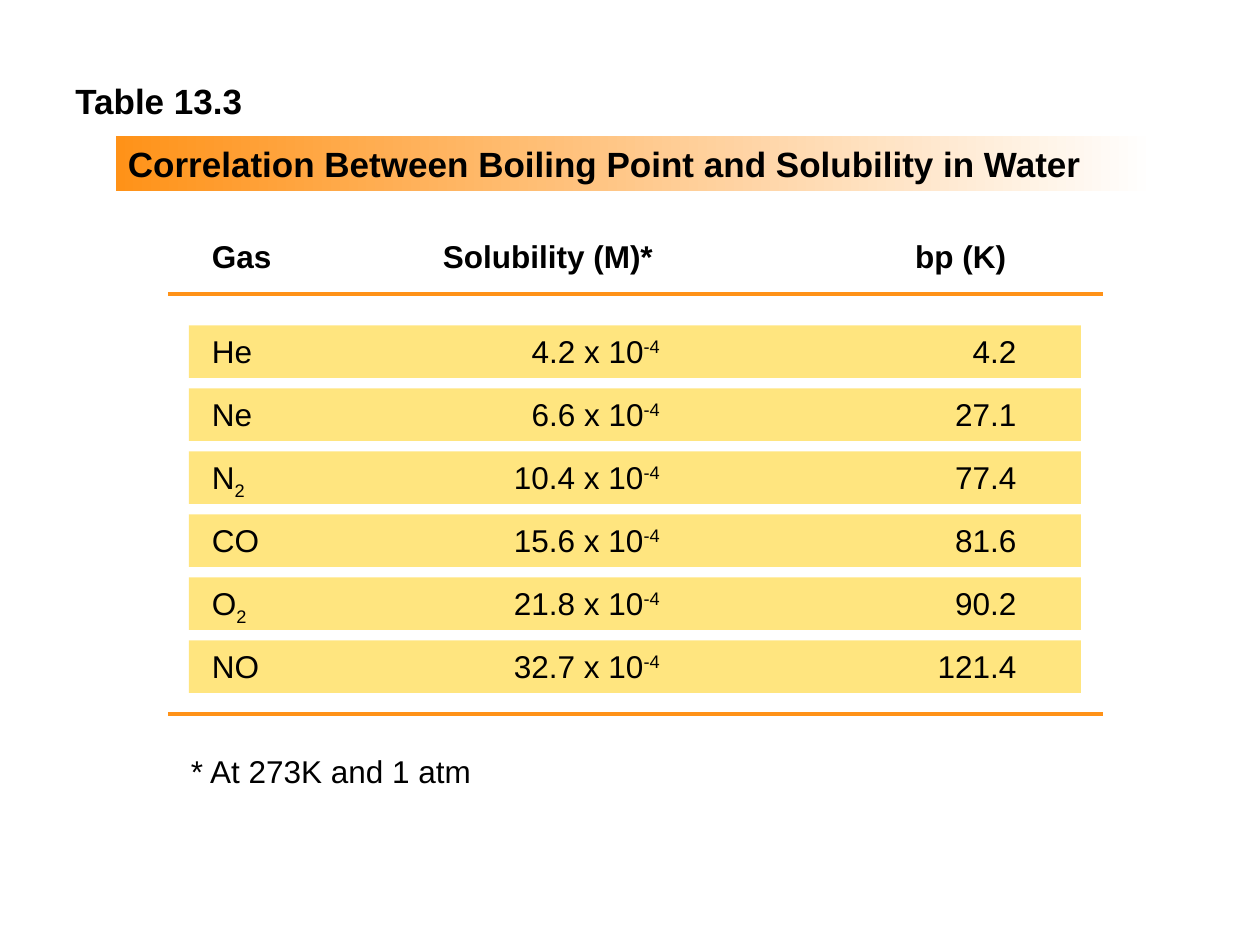
from lxml import etree
from pptx import Presentation
from pptx.dml.color import RGBColor
from pptx.enum.shapes import MSO_CONNECTOR, MSO_SHAPE
from pptx.enum.text import MSO_ANCHOR, PP_ALIGN
from pptx.oxml.ns import qn
from pptx.util import Cm, Pt

LEFT, RIGHT = PP_ALIGN.LEFT, PP_ALIGN.RIGHT
TOP = MSO_ANCHOR.TOP
RECT = MSO_SHAPE.RECTANGLE
STRAIGHT = MSO_CONNECTOR.STRAIGHT

FONT = "Arial"
BLACK, WHITE, ORANGE, YELLOW = "000000", "FFFFFF", "FF9218", "FFCC00"
NO_STYLE = "{2D5ABB26-0587-4C30-8999-92F81FD0307C}"

HEADER = ("Gas", "Solubility (M)*", "bp (K)")
GASES = [
    (("He", ""), "4.2", "4.2"),
    (("Ne", ""), "6.6", "27.1"),
    (("N", "2"), "10.4", "77.4"),
    (("CO", ""), "15.6", "81.6"),
    (("O", "2"), "21.8", "90.2"),
    (("NO", ""), "32.7", "121.4"),
]
# Column width, left margin of the heading, right margin of the values (cm)
COLUMNS = [(4.88, 0.46, 0.25), (4.88, 0.24, 0.27), (8.22, 4.88, 1.3)]
HEADER_H, ROW_H, BAND_H = 1.91, 1.27, 1.06
HEADER_TOP, ROW_TOP = 0.19, 0.19


def rgb(color):
    return RGBColor.from_string(color)


def write(tf, text, size=18, bold=False, align=LEFT, sub="", sup=""):
    """Fill the first paragraph with text and an optional sub- or superscript."""
    p = tf.paragraphs[0]
    p.alignment = align
    for part, baseline in ((text, 0), (sub, -25000), (sup, 30000)):
        if not part:
            continue
        r = p.add_run()
        r.text = part
        r.font.name, r.font.size, r.font.bold = FONT, Pt(size), bold
        r.font.color.rgb = rgb(BLACK)
        if baseline:
            r.font._element.set("baseline", str(baseline))


def add_label(s, x, y, w, h, text, wrap=True, **fmt):
    tf = s.shapes.add_textbox(Cm(x), Cm(y), Cm(w), Cm(h)).text_frame
    tf.word_wrap = wrap
    write(tf, text, **fmt)


def add_rect(s, x, y, w, h):
    sp = s.shapes.add_shape(RECT, Cm(x), Cm(y), Cm(w), Cm(h))
    sp.shadow.inherit = False
    sp.line.fill.background()
    return sp


def add_banner(s, x, y, w, h, text):
    sp = add_rect(s, x, y, w, h)
    sp.fill.gradient()
    sp.fill.gradient_angle = 0
    for stop, position, color in zip(sp.fill.gradient_stops, (0, 1), (ORANGE, WHITE)):
        stop.position, stop.color.rgb = position, rgb(color)
    tf = sp.text_frame
    tf.word_wrap, tf.vertical_anchor = True, TOP
    write(tf, text, size=20, bold=True)


def add_band(s, x, y, w, h):
    """Half-transparent strip behind one table row."""
    sp = add_rect(s, x, y, w, h)
    sp.fill.solid()
    sp.fill.fore_color.rgb = rgb(YELLOW)
    color = sp._element.spPr.find(qn("a:solidFill")).find(qn("a:srgbClr"))
    etree.SubElement(color, qn("a:alpha"), val="50000")


def add_rule(s, x, y, w):
    line = s.shapes.add_connector(STRAIGHT, Cm(x), Cm(y), Cm(x + w), Cm(y))
    line.line.color.rgb, line.line.width = rgb(ORANGE), Pt(2.25)
    etree.SubElement(line._element.spPr, qn("a:effectLst"))


def set_cell(cell, text, left, right, top, **fmt):
    cell.fill.background()
    cell.margin_left, cell.margin_right = Cm(left), Cm(right)
    cell.margin_top, cell.margin_bottom = Cm(top), 0
    cell.vertical_anchor = TOP
    write(cell.text_frame, text, **fmt)


def add_gas_table(s, x, y):
    width = sum(w for w, _, _ in COLUMNS)
    height = HEADER_H + ROW_H * len(GASES)
    for i in range(len(GASES)):
        add_band(s, x, y + HEADER_H + i * ROW_H, width, BAND_H)

    frame = s.shapes.add_table(len(GASES) + 1, len(COLUMNS),
                               Cm(x), Cm(y), Cm(width), Cm(height))
    table = frame.table
    table.first_row = table.horz_banding = False
    table._tbl.tblPr.find(qn("a:tableStyleId")).text = NO_STYLE

    table.rows[0].height = Cm(HEADER_H)
    for c, (w, left, right) in enumerate(COLUMNS):
        table.columns[c].width = Cm(w)
        set_cell(table.cell(0, c), HEADER[c], left, right, HEADER_TOP, bold=True)

    for r, ((symbol, count), solubility, bp) in enumerate(GASES, start=1):
        table.rows[r].height = Cm(ROW_H)
        values = (
            (symbol, {"sub": count}),
            (f"{solubility} x 10", {"sup": "-4", "align": RIGHT}),
            (bp, {"align": RIGHT}),
        )
        for c, (text, fmt) in enumerate(values):
            _, left, right = COLUMNS[c]
            set_cell(table.cell(r, c), text, left, right, ROW_TOP, **fmt)


def main():
    prs = Presentation()
    prs.slide_width, prs.slide_height = Cm(25.4), Cm(19.05)
    s = prs.slides.add_slide(prs.slide_layouts[6])

    add_gas_table(s, 3.81, 4.65)
    add_banner(s, 2.33, 2.75, 20.96, 1.1,
               "Correlation Between Boiling Point and Solubility in Water")
    add_label(s, 1.27, 1.48, 3.94, 1.1, "Table 13.3", wrap=False, size=20, bold=True)
    for y in (5.93, 14.39):
        add_rule(s, 3.39, y, 18.84)
    add_label(s, 3.6, 15.03, 13.55, 1.02, "* At 273K and 1 atm")

    prs.save("out.pptx")


if __name__ == "__main__":
    main()
